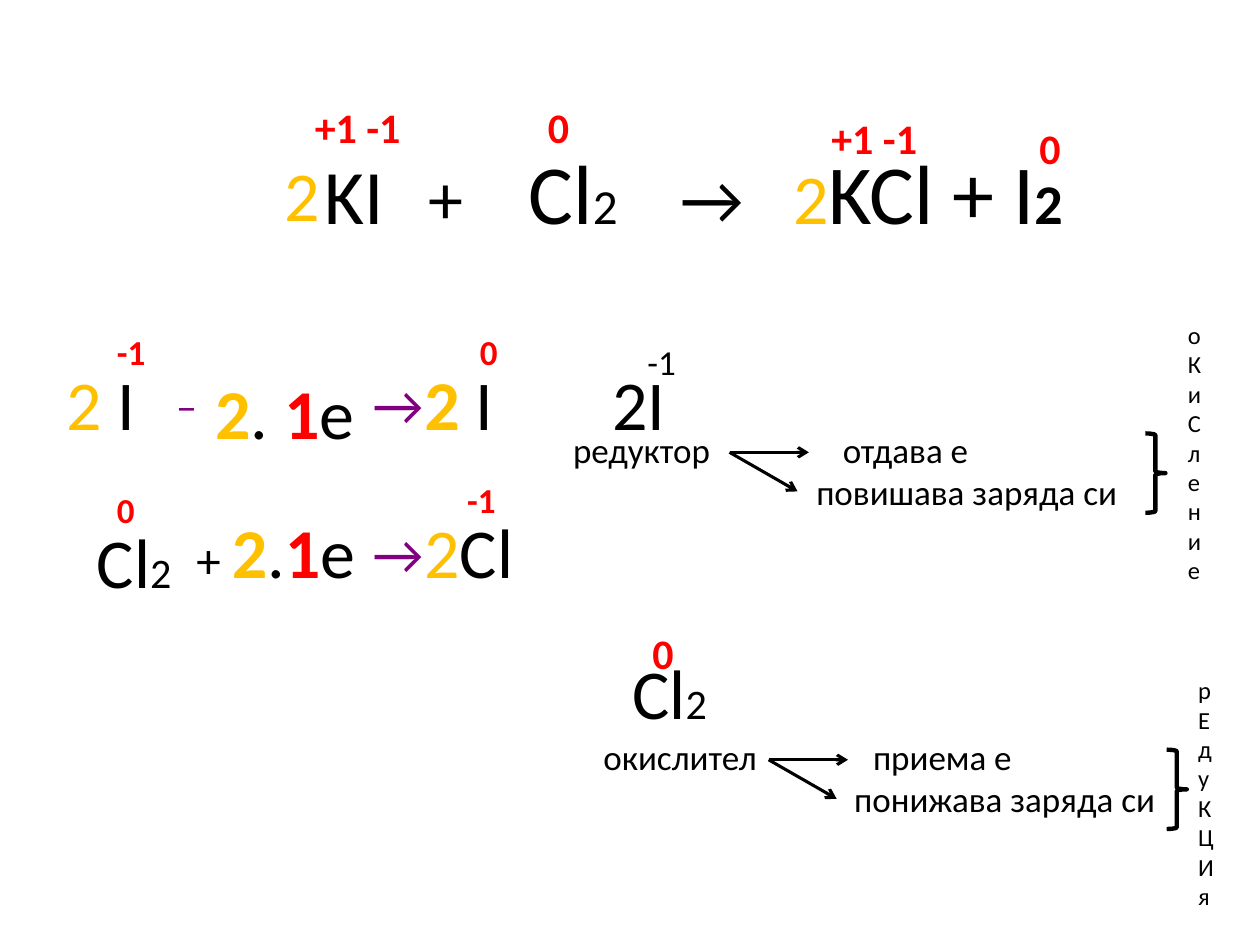
"""Build a slide on the redox reaction of potassium iodide with chlorine."""
from lxml.etree import SubElement
from pptx import Presentation
from pptx.dml.color import RGBColor
from pptx.enum.shapes import MSO_CONNECTOR as Link, MSO_SHAPE as Shape
from pptx.enum.text import MSO_AUTO_SIZE as Fit
from pptx.oxml.ns import qn
from pptx.util import Inches, Pt

FONT = "Calibri"
BLACK, RED, GOLD, PLUM = "000000", "FF0000", "FFC000", "800080"
LEFT, MID, RIGHT = 0.43, 2.86, 3.27
TOP, LOW = 2.81, 3.99

STOPS = (0.82, 1.62, 2.82, 3.72)
MAIN = [
    ("KI", 44, BLACK), ("\t+\t", 40, BLACK), ("Cl", 48, BLACK),
    ("2", 28, BLACK), ("\t→\t", 40, BLACK), ("2", 40, GOLD),
    ("KCl + I", 48, BLACK), ("2", 32, BLACK, True),
]
TERMS = [
    (2.16, 1.15, 0.63, 0.77, [("2", 40, GOLD)]),
    (LEFT, TOP, 1.02, 0.77, [("2", 40, GOLD), (" I", 40, BLACK)]),
    (1.3, 2.96, 0.39, 0.5, [("–", 24, PLUM)]),
    (1.61, 2.88, 1.73, 0.77, [("2", 40, GOLD, True), (". ", 40, BLACK),
                              ("1", 40, RED, True), ("e", 40, BLACK)]),
    (MID, 2.88, 0.65, 0.63, [("→", 32, PLUM)]),
    (RIGHT, TOP, 0.8, 0.77, [("2 ", 40, GOLD, True), ("I", 40, BLACK)]),
    (0.67, 4.07, 0.85, 0.77, [("Cl", 40, BLACK), ("2", 24, BLACK)]),
    (1.46, LOW, 1.81, 0.77, [("+ ", 28, BLACK), ("2", 40, GOLD, True),
                             (".", 40, BLACK), ("1", 40, RED, True),
                             ("e", 40, BLACK)]),
    (MID, 4.07, 0.65, 0.63, [("→", 32, PLUM)]),
    (RIGHT, LOW, 0.95, 0.77, [("2", 40, GOLD), ("Cl", 40, BLACK)]),
    (4.76, TOP, 1.72, 0.77, [("2I", 40, BLACK)]),
    (4.92, 5.11, 0.85, 0.77, [("Cl", 40, BLACK), ("2", 24, BLACK)]),
]
CHARGES = [
    (2.4, 0.76, "+1 -1", 24, RED), (4.25, 0.76, "0", 24, RED),
    (6.5, 0.84, "+1 -1", 24, RED), (8.15, 0.92, "0", 24, RED),
    (0.83, 2.57, "-1", 20, RED), (3.71, 2.57, "0", 20, RED),
    (0.83, 3.83, "0", 20, RED), (3.61, 3.75, "-1", 20, RED),
    (5.04, 2.65, "-1", 20, BLACK), (5.08, 4.93, "0", 24, RED),
]
ROLES = [
    dict(at=(4.45, 3.35), stops=(2.14, 1.93), arrow=5.79, brace=(9.09, 3.44),
         lines=("редуктор\tотдава е", "\tповишава заряда си"),
         word=(9.33, 2.49, 2.22, ("о", "Ки", "С", "ление"))),
    dict(at=(4.69, 5.79), stops=(2.14, 1.99), arrow=6.1, brace=(9.26, 5.95),
         lines=("окислител\tприема е", "\tпонижава заряда си"),
         word=(9.41, 5.31, 1.99, ("р", "Еду", "К", "Ц", "И", "я"))),
]


def paint(hue):
    return RGBColor.from_string(hue)


def write(slide, box, paras, stops=()):
    """Add a text box; stops holds one tuple of tab stops per paragraph."""
    frame = slide.shapes.add_textbox(*map(Inches, box)).text_frame
    frame.word_wrap = True
    frame.auto_size = Fit.SHAPE_TO_FIT_TEXT
    for i, runs in enumerate(paras):
        para = frame.add_paragraph() if i else frame.paragraphs[0]
        if stops:
            tabs = SubElement(para._p.get_or_add_pPr(), qn("a:tabLst"))
            for stop in stops[i]:
                SubElement(tabs, qn("a:tab"), pos=str(Inches(stop)), algn="l")
        for text, size, hue, *bold in runs:
            run = para.add_run()
            run.text = text
            font = run.font
            font.name, font.size, font.bold = FONT, Pt(size), bool(bold)
            font.color.rgb = paint(hue)


def draw_line(slide, *ends):
    line = slide.shapes.add_connector(Link.STRAIGHT, *map(Inches, ends))
    line.line.color.rgb = paint(BLACK)
    line.line.width = Pt(1.75)
    SubElement(line.line._get_or_add_ln(), qn("a:tailEnd"), type="arrow")
    SubElement(line._element.spPr, qn("a:effectLst"))


def draw_brace(slide, x, y):
    brace = slide.shapes.add_shape(
        Shape.RIGHT_BRACE, *map(Inches, (x, y, 0.16, 0.63)))
    brace.shadow.inherit = False
    brace.fill.background()
    brace.line.color.rgb = paint(BLACK)
    brace.line.width = Pt(2.5)


def draw_role(slide, role):
    x, y = role["at"]
    write(slide, (x, y, 5.28, 0.77),
          [[(line, 20, BLACK)] for line in role["lines"]],
          [(stop,) for stop in role["stops"]])
    start, row = role["arrow"], y + 0.24
    draw_line(slide, start, row, start + 0.63, row)
    draw_line(slide, start, row, start + 0.54, row + 0.31)
    draw_brace(slide, *role["brace"])
    left, top, high, parts = role["word"]
    write(slide, (left, top, 0.39, high),
          [[(part, 14, BLACK)] for part in parts])


def main():
    deck = Presentation()
    deck.slide_width, deck.slide_height = Inches(10), Inches(7.5)
    slide = deck.slides.add_slide(deck.slide_layouts[6])
    write(slide, (2.48, 1.07, 6.77, 0.9), [MAIN], [STOPS])
    for *box, runs in TERMS:
        write(slide, box, [runs])
    for x, y, text, size, hue in CHARGES:
        wide = 0.94 if len(text) > 2 else 0.45
        bold = [True] if hue == RED else []
        write(slide, (x, y, wide, size / 48), [[(text, size, hue, *bold)]])
    for role in ROLES:
        draw_role(slide, role)
    deck.save("out.pptx")


if __name__ == "__main__":
    main()
